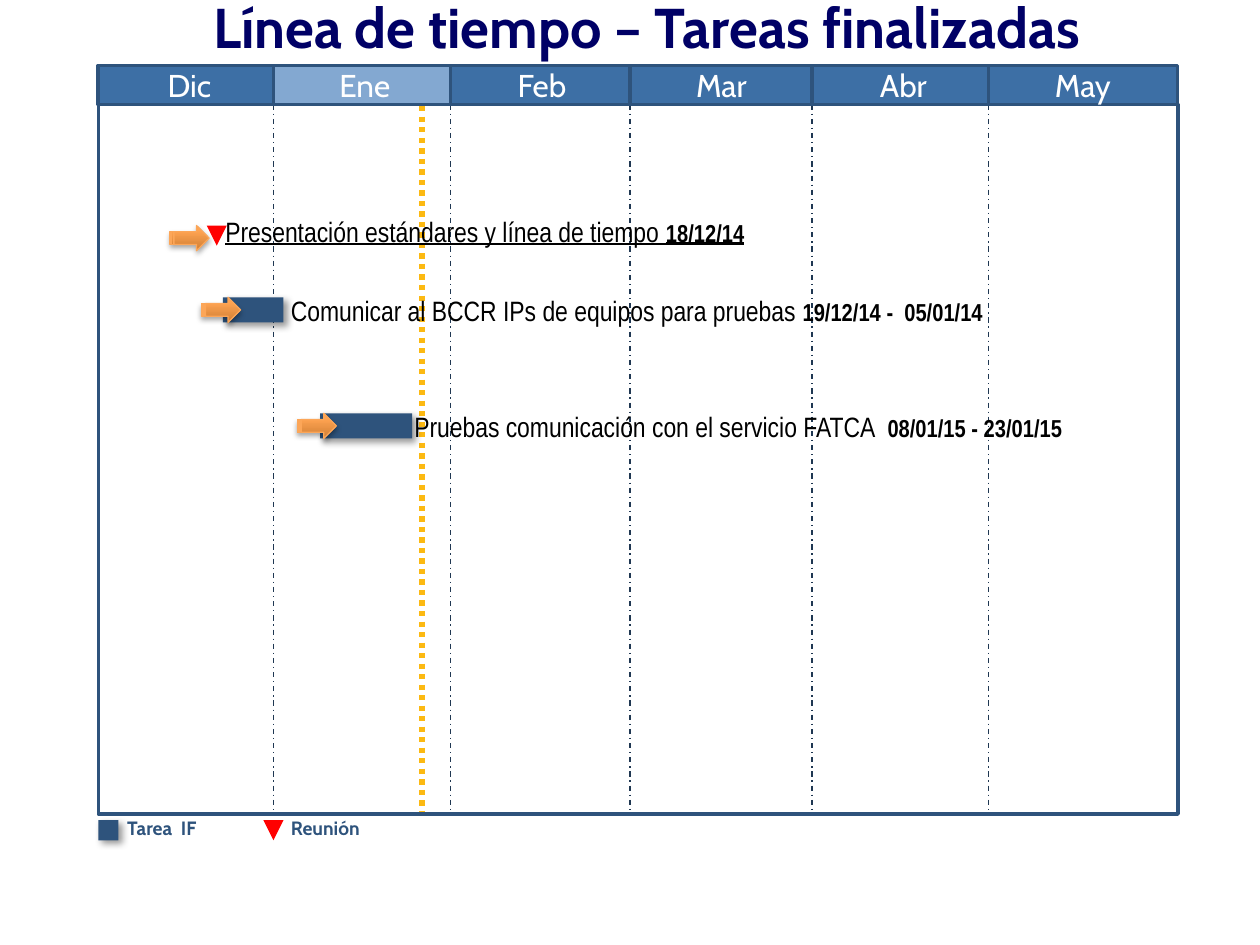
from dataclasses import dataclass

from lxml.etree import SubElement
from pptx import Presentation
from pptx.dml.color import RGBColor
from pptx.enum.dml import MSO_LINE
from pptx.enum.shapes import MSO_CONNECTOR, MSO_SHAPE
from pptx.enum.text import MSO_ANCHOR, MSO_AUTO_SIZE, PP_ALIGN
from pptx.oxml.ns import qn
from pptx.util import Pt


@dataclass(frozen=True)
class Theme:
    title: str = "000066"
    navy: str = "2E537C"
    month: str = "3D6FA5"
    current: str = "83A8D1"
    divider: str = "1F3752"
    today: str = "FCB912"
    meeting: str = "FF0000"
    arrow_dark: str = "CF7E34"
    arrow_light: str = "FFA452"
    arrow_edge: str = "FCA658"
    black: str = "000000"
    white: str = "FFFFFF"
    head_font: str = "Cabin"
    task_font: str = "Arial Narrow"
    title_size: int = 32
    month_size: int = 18
    task_size: int = 16
    date_size: int = 14
    legend_size: int = 11


T = Theme()

# Alpha %, blur, distance, direction
BAR_SHADOW = (40, 4, 3, 45)
ARROW_SHADOW = (35, 3.1, 1.8, 90)

# Month, left, width
MONTHS = [("Dic", 56, 104.4), ("Ene", 156.2, 104.4), ("Feb", 257.5, 104.4),
          ("Mar", 360, 104.4), ("Abr", 464, 104.4), ("May", 564.8, 108)]
HEAD_TOP, HEAD_H = 37.4, 22.3
GRID_TOP, GRID_BOTTOM = 59.8, 465.2

# Top, arrow left, bar (left, width) or None, text left, text width, task, dates
TASKS = [
    (128.9, 97.2, None, 121.7, 348.5,
     "Presentación estándares y línea de tiempo ", "18/12/14"),
    (169.9, 115.2, (127.4, 34.6), 159.1, 427.7,
     "Comunicar al BCCR IPs de equipos para pruebas ", "19/12/14 -  05/01/14"),
    (236.2, 169.9, (182.9, 52.6), 229.7, 443.5,
     "Pruebas comunicación con el servicio FATCA  ", "08/01/15 - 23/01/15"),
]


def box(*values):
    return [Pt(v) for v in values]


def add_run(p, text, color, **fmt):
    r = p.add_run()
    r.text = text
    for name, value in fmt.items():
        setattr(r.font, name, value)
    r.font.color.rgb = RGBColor.from_string(color)


def add_shadow(sp, alpha, blur, dist, direction):
    effects = sp._element.spPr.find(qn("a:effectLst"))
    shadow = SubElement(effects, qn("a:outerShdw"), blurRad=str(Pt(blur)),
                        dist=str(Pt(dist)), dir=str(direction * 60000),
                        algn="ctr", rotWithShape="0")
    color = SubElement(shadow, qn("a:srgbClr"), val=T.black)
    SubElement(color, qn("a:alpha"), val=str(alpha * 1000))


def add_block(s, kind, place, fill=None, line=None, width=2, shadow=None):
    sp = s.shapes.add_shape(kind, *box(*place))
    sp.shadow.inherit = False
    if fill:
        sp.fill.solid()
        sp.fill.fore_color.rgb = RGBColor.from_string(fill)
    else:
        sp.fill.background()
    if line:
        sp.line.color.rgb = RGBColor.from_string(line)
        sp.line.width = Pt(width)
    else:
        sp.line.fill.background()
    if shadow:
        add_shadow(sp, *shadow)
    return sp


def add_line(s, x, top, bottom, color, width, dash):
    line = s.shapes.add_connector(MSO_CONNECTOR.STRAIGHT, *box(x, top, x, bottom))
    line.line.color.rgb = RGBColor.from_string(color)
    line.line.width = Pt(width)
    line.line.dash_style = dash
    SubElement(line._element.spPr, qn("a:effectLst"))


def add_text(s, place):
    tf = s.shapes.add_textbox(*box(*place)).text_frame
    tf.word_wrap = True
    return tf.paragraphs[0]


def add_meeting(s, left, top):
    add_block(s, MSO_SHAPE.ISOSCELES_TRIANGLE, (left, top, 11.5, 11.5),
              T.meeting).rotation = 180


def add_arrow(s, left, top):
    sp = add_block(s, MSO_SHAPE.STRIPED_RIGHT_ARROW, (left, top, 22.3, 14.4),
                   line=T.arrow_edge, width=0.75, shadow=ARROW_SHADOW)
    sp.fill.gradient()
    sp.fill.gradient_angle = 90
    stops = [(0, T.arrow_dark), (0.8, T.arrow_light)]
    for stop, (position, color) in zip(sp.fill.gradient_stops, stops):
        stop.position = position
        stop.color.rgb = RGBColor.from_string(color)


def add_month(s, name, left, width):
    fill = T.current if name == "Ene" else T.month
    sp = add_block(s, MSO_SHAPE.RECTANGLE, (left, HEAD_TOP, width, HEAD_H),
                   fill, T.navy)
    tf = sp.text_frame
    tf.vertical_anchor = MSO_ANCHOR.MIDDLE
    p = tf.paragraphs[0]
    p.alignment = PP_ALIGN.CENTER
    add_run(p, name, T.white, name=T.head_font, size=Pt(T.month_size))


def add_task(s, top, arrow, bar, left, width, task, dates):
    if bar:
        add_block(s, MSO_SHAPE.RECTANGLE, (bar[0], top, bar[1], 14.4), T.navy,
                  shadow=BAR_SHADOW)
    else:
        add_meeting(s, 118.1, top)
    text_top = top - (5.8 if bar else 10.1)
    p = add_text(s, (left, text_top, width, 26.6))
    fmt = {"name": T.task_font, "underline": bar is None}
    add_run(p, task, T.black, size=Pt(T.task_size), **fmt)
    add_run(p, dates, T.black, size=Pt(T.date_size), bold=True, **fmt)
    add_arrow(s, arrow, top)


def add_title(s, text):
    sp = s.shapes.title
    sp.left, sp.top, sp.width, sp.height = box(44.6, -7.9, 650.2, 46.1)
    tf = sp.text_frame
    tf.auto_size = MSO_AUTO_SIZE.NONE
    tf.vertical_anchor = MSO_ANCHOR.TOP
    p = tf.paragraphs[0]
    p.alignment = PP_ALIGN.CENTER
    add_run(p, text, T.title, name=T.head_font, size=Pt(T.title_size), bold=True)


def add_legend(s):
    add_block(s, MSO_SHAPE.RECTANGLE, (56.2, 468.7, 11.5, 11.5), T.navy,
              shadow=BAR_SHADOW)
    add_meeting(s, 150.5, 468.7)
    p = add_text(s, (65.5, 463, 380.2, 20.9))
    tabs = SubElement(p._p.get_or_add_pPr(), qn("a:tabLst"))
    SubElement(tabs, qn("a:tab"), pos=str(Pt(93.6)), algn="l")
    add_run(p, "Tarea  IF\tReunión", T.navy, name=T.head_font,
            size=Pt(T.legend_size), bold=True)


def main():
    prs = Presentation()
    prs.slide_width, prs.slide_height = box(720, 540)
    s = prs.slides.add_slide(prs.slide_layouts[5])
    add_title(s, "Línea de tiempo – Tareas finalizadas")

    # Calendar: today, month dividers, frame and header
    add_line(s, 241.2, 54.7, 468, T.today, 3, MSO_LINE.ROUND_DOT)
    for _, left, _ in MONTHS[1:]:
        add_line(s, left, GRID_TOP, GRID_BOTTOM, T.divider, 0.75, MSO_LINE.DASH_DOT)
    add_block(s, MSO_SHAPE.RECTANGLE,
              (56.2, GRID_TOP, 617, GRID_BOTTOM - GRID_TOP), line=T.navy)
    for month in MONTHS:
        add_month(s, *month)

    # Finished tasks and key
    for task in TASKS:
        add_task(s, *task)
    add_legend(s)
    prs.save("out.pptx")


if __name__ == "__main__":
    main()
